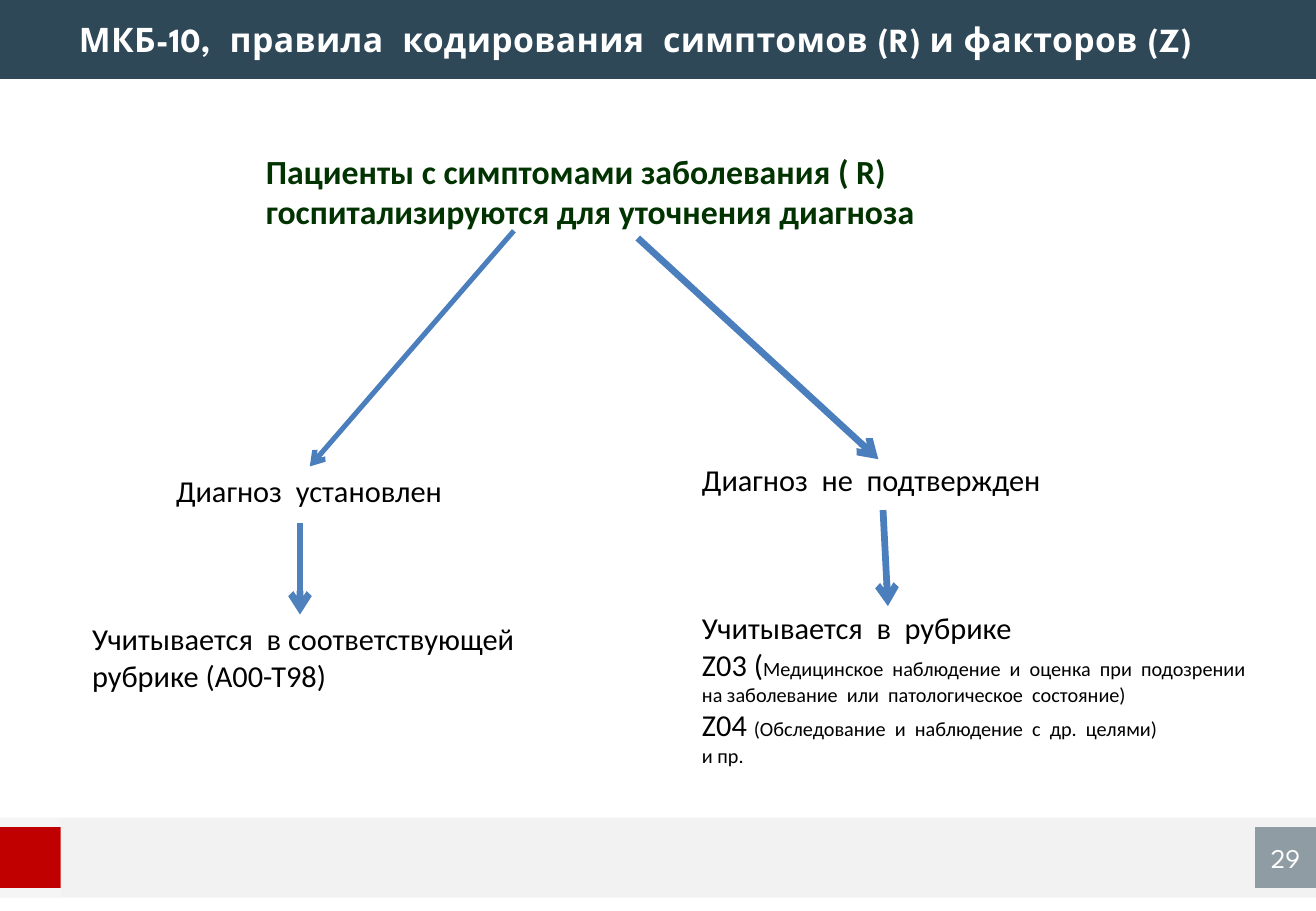
import pptx
import pptx.util
import pptx.dml.color
import pptx.enum.shapes
import pptx.enum.text
import pptx.oxml.ns
from lxml import etree

Pt = pptx.util.Pt
RGB = pptx.dml.color.RGBColor.from_string
qn = pptx.oxml.ns.qn
ALIGN = pptx.enum.text.PP_ALIGN
MID = pptx.enum.text.MSO_ANCHOR.MIDDLE

THEME = {
    "navy": "2F4858", "grey": "F2F2F2", "red": "C00000", "white": "FFFFFF",
    "green": "003300", "black": "000000", "blue": "4B7EBC", "sky": "4F81BD",
    "head": 20, "text": 18, "page": 16, "note": 12,
    "body": "Calibri", "brand": "League Spartan",
}
WIDE, HIGH = 780, 540
SIDE = 36
LINE = 22  # height of one line of body text


def write(frame, text, sizes=("text",), color="black", font="body",
          bold=False, align=ALIGN.LEFT, before=0):
    """Add one paragraph; "|" splits it into runs that take sizes in turn."""
    para = frame.paragraphs[0]
    if para.runs:
        para = frame.add_paragraph()
    para.alignment = align
    para.space_before = Pt(before)
    for part, size in zip(text.split("|"), sizes):
        run = para.add_run()
        run.text = part
        run.font.name = THEME[font]
        run.font.size = Pt(THEME[size])
        run.font.bold = bold
        run.font.color.rgb = RGB(THEME[color])
    return para


deck = pptx.Presentation()
deck.slide_width, deck.slide_height = Pt(WIDE), Pt(HIGH)
slide = deck.slides.add_slide(deck.slide_layouts[5])
shapes = slide.shapes

# Bands and corner blocks: left, top, width, height, colour, opacity
blocks = [
    (0, 484.6, WIDE, 47.5, "grey", 100),
    (0, 0, WIDE, 46.8, "navy", 100),
    (0, 484.6, SIDE, 47.5, "white", 30),
    (0, 490.3, SIDE, SIDE, "red", 100),
    (WIDE - SIDE, 490.3, SIDE, SIDE, "navy", 50),
]
for *place, color, alpha in blocks:
    block = shapes.add_shape(pptx.enum.shapes.MSO_SHAPE.RECTANGLE,
                             *map(Pt, place))
    block.shadow.inherit = False
    block.fill.solid()
    block.fill.fore_color.rgb = RGB(THEME[color])
    block.line.fill.background()
    if alpha < 100:
        tint = block.element.find(".//" + qn("a:srgbClr"))
        etree.SubElement(tint, qn("a:alpha")).set("val", str(alpha * 1000))

# Page number sits in the last block
page = block.text_frame
page.word_wrap = False
page.vertical_anchor = MID
write(page, "29", ["page"], "white", "brand", align=ALIGN.CENTER)

# Title, raised above its band
title = shapes.title
title.left, title.top, title.width, title.height = map(Pt, (46.8, 0, 709.2, 46.8))
title.element.getparent().append(title.element)
frame = title.text_frame
frame.auto_size = pptx.enum.text.MSO_AUTO_SIZE.NONE
frame.word_wrap = True
frame.vertical_anchor = MID
frame.margin_left = frame.margin_right = frame.margin_top = frame.margin_bottom = 0
para = write(frame, "МКБ-10,  правила  кодирования  симптомов (R) и факторов (Z)",
             ["head"], "white", "brand", bold=True)
para.runs[0].font._element.set("spc", "20")

# Text boxes: place, then paragraphs with their format
top = {"sizes": ["head"], "color": "green", "bold": True}
mixed = {"sizes": ["text", "note"]}
gap = {"before": 3 * LINE}
boxes = [
    ((150.5, 85.7, 454.3, 55.4), [
        ("Пациенты с симптомами заболевания ( R)", top),
        ("госпитализируются для уточнения диагноза", top),
    ]),
    ((47.5, 276.5, 271.4, 138.2), [
        ("Диагноз  установлен", {"align": ALIGN.CENTER}),
        ("Учитывается  в соответствующей", gap),
        ("рубрике (А00-Т98)", {}),
    ]),
    ((409, 270, 347.8, 189.4), [
        ("Диагноз  не  подтвержден", {}),
        ("Учитывается  в  рубрике", gap),
        ("Z03 (|Медицинское  наблюдение  и  оценка  при  подозрении  "
         "на заболевание  или  патологическое  состояние)", mixed),
        ("Z04 |(Обследование  и  наблюдение  с  др.  целями)", mixed),
        ("и пр.", {"sizes": ["note"]}),
    ]),
]
for place, lines in boxes:
    frame = shapes.add_textbox(*map(Pt, place)).text_frame
    frame.word_wrap = True
    for text, style in lines:
        write(frame, text, **style)

# Arrows: start, end, width, colour
arrows = [
    (304.6, 136.8, 183.6, 276.5, 3, "blue"),
    (177.8, 310.3, 177.8, 364.3, 4, "sky"),
    (378, 141.1, 520.6, 272.2, 4, "blue"),
    (523.4, 302.4, 526.3, 359.3, 4, "blue"),
]
for *ends, width, color in arrows:
    arrow = shapes.add_connector(pptx.enum.shapes.MSO_CONNECTOR.STRAIGHT,
                                 *map(Pt, ends))
    arrow.line.width = Pt(width)
    arrow.line.color.rgb = RGB(THEME[color])
    etree.SubElement(arrow.line._get_or_add_ln(), qn("a:tailEnd")).set("type", "arrow")
    etree.SubElement(arrow.element.spPr, qn("a:effectLst"))

deck.save("out.pptx")
